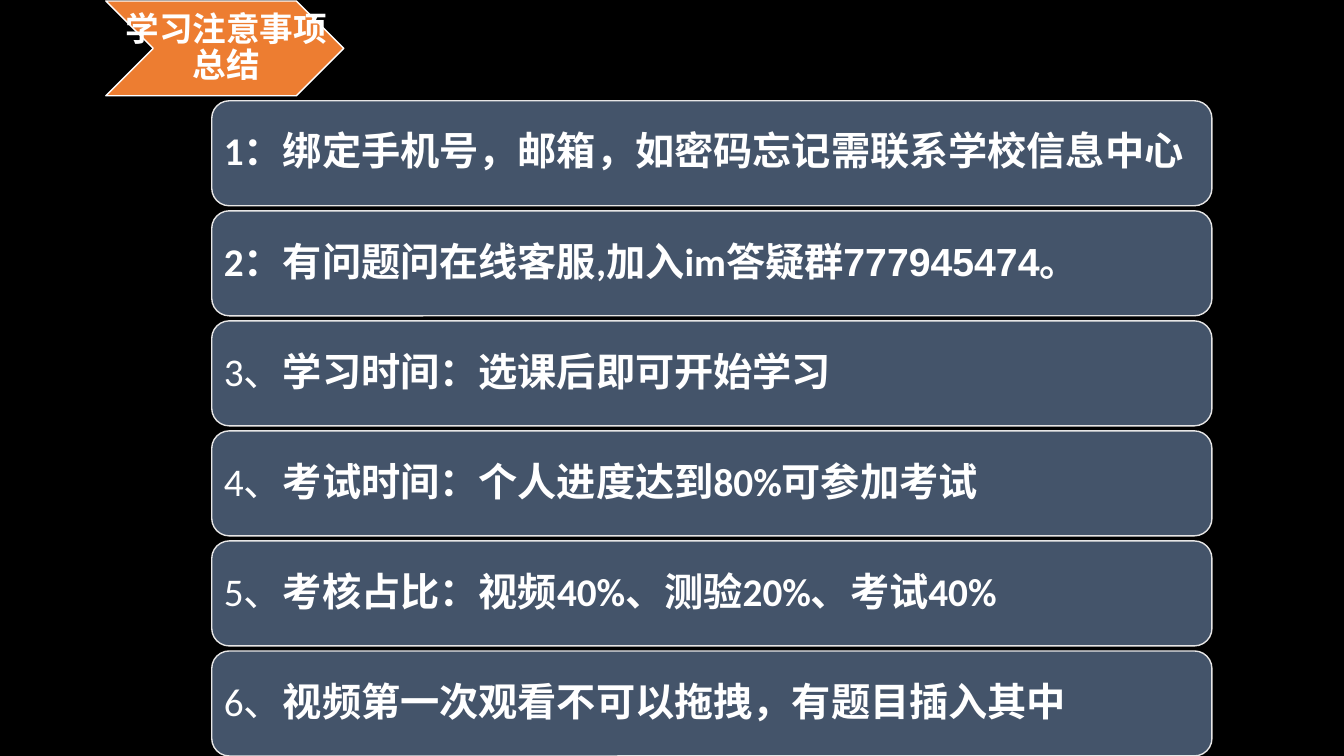
from dataclasses import dataclass

from pptx import Presentation
from pptx.dml.color import RGBColor
from pptx.enum.shapes import MSO_SHAPE
from pptx.enum.text import MSO_ANCHOR, PP_ALIGN
from pptx.util import Inches, Pt

CHEVRON = MSO_SHAPE.CHEVRON
ROUNDED = MSO_SHAPE.ROUNDED_RECTANGLE
MIDDLE = MSO_ANCHOR.MIDDLE
LEFT, CENTER = PP_ALIGN.LEFT, PP_ALIGN.CENTER


@dataclass(frozen=True)
class Theme:
    background: str = "000000"
    title_fill: str = "ED7D31"
    title_line: str = "FFFFFF"
    note_fill: str = "44546A"
    note_line: str = "E7E6E6"
    text: str = "FFFFFF"
    font: str = "Calibri"
    number_font: str = "Arial"
    title_size: int = 24
    note_size: int = 28


THEME = Theme()
BOLD = {"bold": True}
PLAIN = {"bold": False}

TITLE = "学习注意事项总结"
NOTES = [
    [("1：绑定手机号，邮箱，如密码忘记需联系学校信息中心", BOLD)],
    [
        ("2：有问题问在线客服,加入im答疑群", BOLD),
        ("777945474", {"bold": True, "font": THEME.number_font}),
        ("。", BOLD),
    ],
    [("3、", PLAIN), ("学习时间：选课后即可开始学习", BOLD)],
    [("4、", PLAIN), ("考试时间：个人进度达到80%可参加考试", BOLD)],
    [("5、", PLAIN), ("考核占比：视频40%、测验20%、考试40%", BOLD)],
    [("6、", PLAIN), ("视频第一次观看不可以拖拽，有题目插入其中", BOLD)],
]


def add_run(paragraph, text, size, bold=True, font=THEME.font):
    run = paragraph.add_run()
    run.text = text
    run.font.name = font
    run.font.size = Pt(size)
    run.font.bold = bold
    run.font.color.rgb = RGBColor.from_string(THEME.text)


def write_text(shape, runs, size, align=LEFT, insets=(0, 0)):
    """Write one paragraph of (text, format) runs; insets are left and right inches."""
    frame = shape.text_frame
    frame.word_wrap = True
    frame.vertical_anchor = MIDDLE
    frame.margin_left, frame.margin_right = map(Inches, insets)
    frame.margin_top = frame.margin_bottom = Inches(0.02)
    paragraph = frame.paragraphs[0]
    paragraph.alignment = align
    paragraph.line_spacing = 0.9
    for text, options in runs:
        add_run(paragraph, text, size, **options)


def add_panel(slide, kind, box, fill, line):
    shape = slide.shapes.add_shape(kind, *map(Inches, box))
    shape.shadow.inherit = False
    shape.fill.solid()
    shape.fill.fore_color.rgb = RGBColor.from_string(fill)
    shape.line.color.rgb = RGBColor.from_string(line)
    shape.line.width = Pt(1)
    return shape


def add_title(slide, box):
    """Place the chevron and a label that spans its full width."""
    add_panel(slide, CHEVRON, box, THEME.title_fill, THEME.title_line)
    label = slide.shapes.add_textbox(*map(Inches, box))
    write_text(label, [(TITLE, BOLD)], THEME.title_size, CENTER, (0.06, 0.03))


def add_notes(slide, box, gap=0.05):
    """Stack one rounded panel per note, evenly filling the box."""
    left, top, width, height = box
    pitch = (height + gap) / len(NOTES)
    for index, runs in enumerate(NOTES):
        panel_box = (left, top + index * pitch, width, pitch - gap)
        panel = add_panel(slide, ROUNDED, panel_box, THEME.note_fill, THEME.note_line)
        write_text(panel, runs, THEME.note_size, insets=(0.07, 0.07))


def main():
    presentation = Presentation()
    presentation.slide_width = Inches(13.33)
    presentation.slide_height = Inches(7.5)
    slide = presentation.slides.add_slide(presentation.slide_layouts[6])
    background = slide.background.fill
    background.solid()
    background.fore_color.rgb = RGBColor.from_string(THEME.background)
    add_title(slide, (1.05, 0.01, 2.36, 0.94))
    add_notes(slide, (2.1, 1, 9.92, 6.5))
    presentation.save("out.pptx")


if __name__ == "__main__":
    main()
